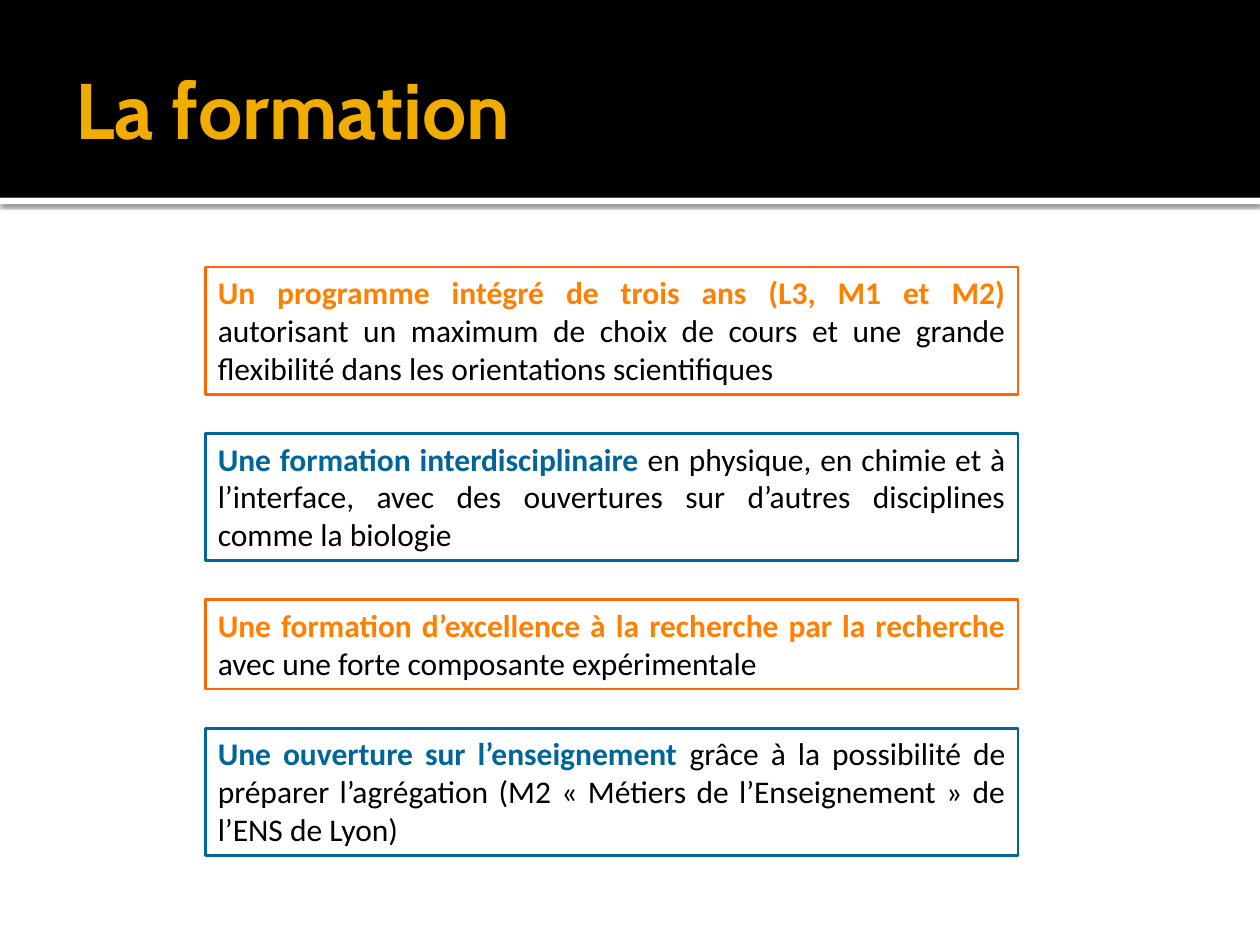
from lxml.etree import SubElement
from pptx import Presentation
from pptx.dml.color import RGBColor
from pptx.enum.shapes import MSO_SHAPE as Shape
from pptx.enum.text import MSO_ANCHOR as Anchor, MSO_AUTO_SIZE as AutoSize, PP_ALIGN as Align
from pptx.oxml.ns import qn
from pptx.util import Inches, Pt

COLORS = {
    "black": "000000",
    "white": "FFFFFF",
    "gold": "F0AD00",
    "orange": "FF8000",
    "orange_line": "FF6600",
    "blue": "006699",
}


class SlideBuilder:
    title_font = "Cabin"
    body_font = "Calibri"

    def __init__(self, page):
        self.page = page

    def color(self, name):
        return RGBColor.from_string(COLORS[name])

    def rectangle(self, left, top, width, height):
        box = self.page.shapes.add_shape(
            Shape.RECTANGLE, Inches(left), Inches(top), Inches(width), Inches(height))
        box.shadow.inherit = False
        return box

    def band(self, top, height, fill, shadow=False):
        box = self.rectangle(0, top, 10, height)
        box.fill.solid()
        box.fill.fore_color.rgb = self.color(fill)
        box.line.fill.background()
        if shadow:
            effects = box.element.spPr.find(qn("a:effectLst"))
            outer = SubElement(effects, qn("a:outerShdw"), blurRad=str(Pt(2.5)),
                               dist=str(Pt(0.8)), dir="5400000", rotWithShape="0")
            tint = SubElement(outer, qn("a:srgbClr"), val=COLORS["black"])
            SubElement(tint, qn("a:alpha"), val="60000")

    def title(self, text):
        box = self.page.shapes.add_textbox(Inches(0.5), Inches(0.17), Inches(9), Inches(1.37))
        frame = box.text_frame
        frame.word_wrap = True
        frame.vertical_anchor = Anchor.MIDDLE
        frame.margin_right = Inches(0.05)
        para = frame.paragraphs[0]
        para.text = text
        para.font.name = self.title_font
        para.font.size = Pt(45)
        para.font.bold = True
        para.font.color.rgb = self.color("gold")

    def framed_text(self, top, height, line, accent, lead, rest):
        box = self.rectangle(1.63, top, 6.45, height)
        box.fill.background()
        box.line.color.rgb = self.color(line)
        box.line.width = Pt(1.5)
        frame = box.text_frame
        frame.word_wrap = True
        frame.auto_size = AutoSize.SHAPE_TO_FIT_TEXT
        frame.vertical_anchor = Anchor.TOP
        para = frame.paragraphs[0]
        para.alignment = Align.JUSTIFY
        para.font.name = self.body_font
        para.font.size = Pt(18)
        for text, color, bold in ((lead + " ", accent, True), (rest, "black", False)):
            span = para.add_run()
            span.text = text
            span.font.name = self.body_font
            span.font.size = Pt(18)
            span.font.bold = bold
            span.font.color.rgb = self.color(color)


def main():
    deck = Presentation()
    deck.slide_width, deck.slide_height = Inches(10), Inches(7.5)
    builder = SlideBuilder(deck.slides.add_slide(deck.slide_layouts[6]))

    builder.band(1.57, 0.05, "white", shadow=True)
    builder.band(0, 1.57, "black")
    builder.title("La formation")

    strengths = [
        (1.01, "Un programme intégré de trois ans (L3, M1 et M2)",
         "autorisant un maximum de choix de cours et une grande flexibilité "
         "dans les orientations scientifiques"),
        (1.01, "Une formation interdisciplinaire",
         "en physique, en chimie et à l’interface, avec des ouvertures sur "
         "d’autres disciplines comme la biologie"),
        (0.71, "Une formation d’excellence à la recherche par la recherche",
         "avec une forte composante expérimentale"),
        (1.01, "Une ouverture sur l’enseignement",
         "grâce à la possibilité de préparer l’agrégation "
         "(M2 « Métiers de l’Enseignement » de l’ENS de Lyon)"),
    ]
    schemes = [("orange_line", "orange"), ("blue", "blue")]
    top, gap = 2.12, 0.31
    for index, (height, lead, rest) in enumerate(strengths):
        line, accent = schemes[index % 2]
        builder.framed_text(top, height, line, accent, lead, rest)
        top += height + gap

    deck.save("out.pptx")


if __name__ == "__main__":
    main()
